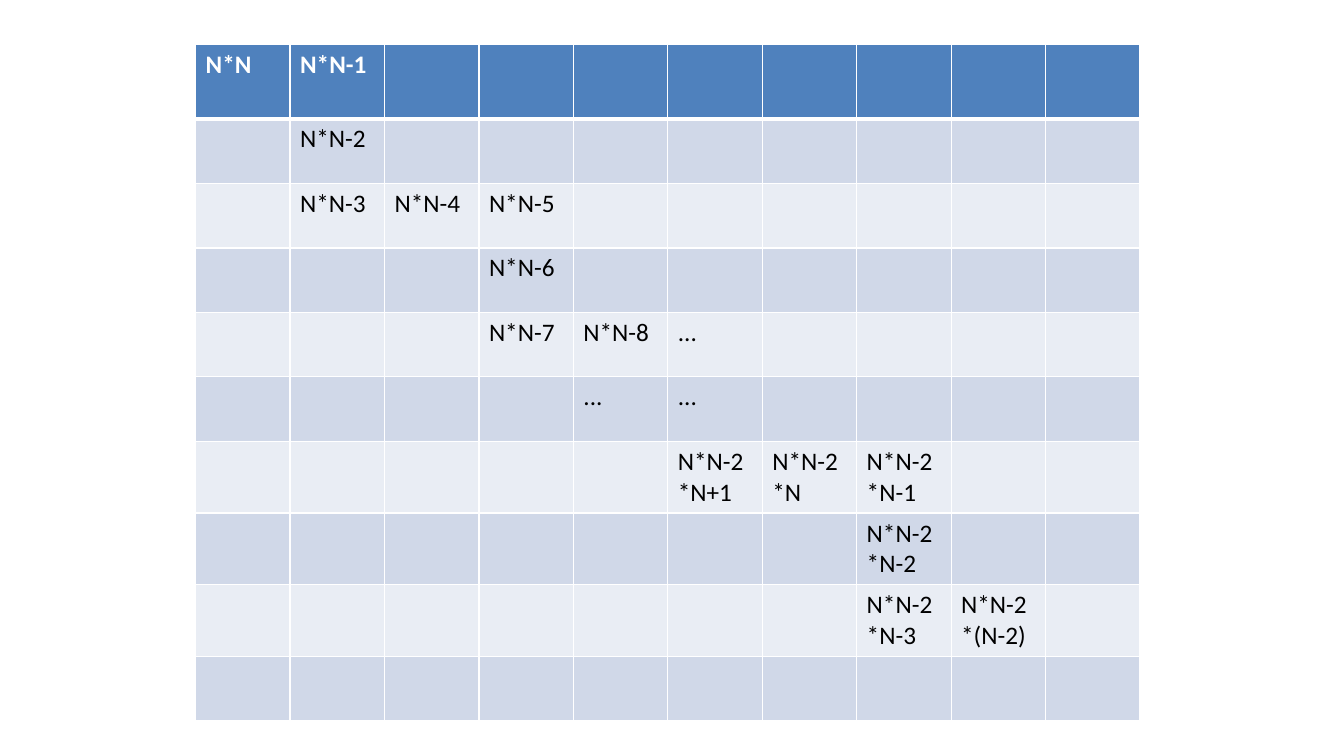
from dataclasses import dataclass

from lxml.etree import SubElement
from pptx import Presentation
from pptx.dml.color import RGBColor as RGB
from pptx.oxml.ns import qn
from pptx.table import _Cell as Cell
from pptx.util import Inches, Pt


@dataclass(frozen=True)
class Theme:
    font: str = "Calibri"
    size: int = 18
    header: str = "4F81BD"
    bands: tuple[str, str] = ("D0D8E8", "E9EDF4")
    header_text: str = "FFFFFF"
    body_text: str = "000000"
    rule: str = "FFFFFF"
    thin: int = 1
    thick: int = 3


@dataclass(frozen=True)
class Step:
    row: int
    col: int
    text: str


THEME = Theme()
COLS = 10
TABLE_WIDTH = 9.37
ROW_HEIGHTS = (0.74, *[0.64] * 5, 0.71, 0.71, 0.71, 0.64)
STEPS = (
    Step(0, 0, "N*N"),
    Step(0, 1, "N*N-1"),
    Step(1, 1, "N*N-2"),
    Step(2, 1, "N*N-3"),
    Step(2, 2, "N*N-4"),
    Step(2, 3, "N*N-5"),
    Step(3, 3, "N*N-6"),
    Step(4, 3, "N*N-7"),
    Step(4, 4, "N*N-8"),
    Step(4, 5, "..."),
    Step(5, 4, "..."),
    Step(5, 5, "..."),
    Step(6, 5, "N*N-2*N+1"),
    Step(6, 6, "N*N-2*N"),
    Step(6, 7, "N*N-2*N-1"),
    Step(7, 7, "N*N-2*N-2"),
    Step(8, 7, "N*N-2*N-3"),
    Step(8, 8, "N*N-2*(N-2)"),
)


def set_borders(cell: Cell, row: int) -> None:
    """Rule all four sides, with a thick line between header and body."""
    top = THEME.thick if row == 1 else THEME.thin
    bottom = THEME.thick if row == 0 else THEME.thin
    widths = {"lnL": THEME.thin, "lnR": THEME.thin, "lnT": top, "lnB": bottom}
    tc_pr = cell._tc.get_or_add_tcPr()
    for tag, width in widths.items():
        line = SubElement(tc_pr, qn(f"a:{tag}"), w=str(Pt(width)))
        fill = SubElement(line, qn("a:solidFill"))
        SubElement(fill, qn("a:srgbClr"), val=THEME.rule)


def format_cell(cell: Cell, row: int) -> None:
    set_borders(cell, row)
    cell.fill.solid()
    color = THEME.header if row == 0 else THEME.bands[(row - 1) % 2]
    cell.fill.fore_color.rgb = RGB.from_string(color)


def write_step(cell: Cell, step: Step) -> None:
    is_header = step.row == 0
    p = cell.text_frame.paragraphs[0]
    spacing = SubElement(p._p.get_or_add_pPr(), qn("a:spcBef"))
    SubElement(spacing, qn("a:spcPct"), val="20000")
    r = p.add_run()
    r.text = step.text
    r.font.name = THEME.font
    r.font.size = Pt(THEME.size)
    r.font.bold = is_header
    color = THEME.header_text if is_header else THEME.body_text
    r.font.color.rgb = RGB.from_string(color)


def main() -> None:
    prs = Presentation()
    prs.slide_width, prs.slide_height = Inches(13.33), Inches(7.5)
    s = prs.slides.add_slide(prs.slide_layouts[6])
    table = s.shapes.add_table(
        len(ROW_HEIGHTS), COLS, Inches(1.94), Inches(0.44),
        Inches(TABLE_WIDTH), Inches(sum(ROW_HEIGHTS)),
    ).table
    for col in table.columns:
        col.width = Inches(TABLE_WIDTH / COLS)
    for i, height in enumerate(ROW_HEIGHTS):
        table.rows[i].height = Inches(height)
        for cell in table.rows[i].cells:
            format_cell(cell, i)
    for step in STEPS:
        write_step(table.cell(step.row, step.col), step)
    prs.save("out.pptx")


if __name__ == "__main__":
    main()
